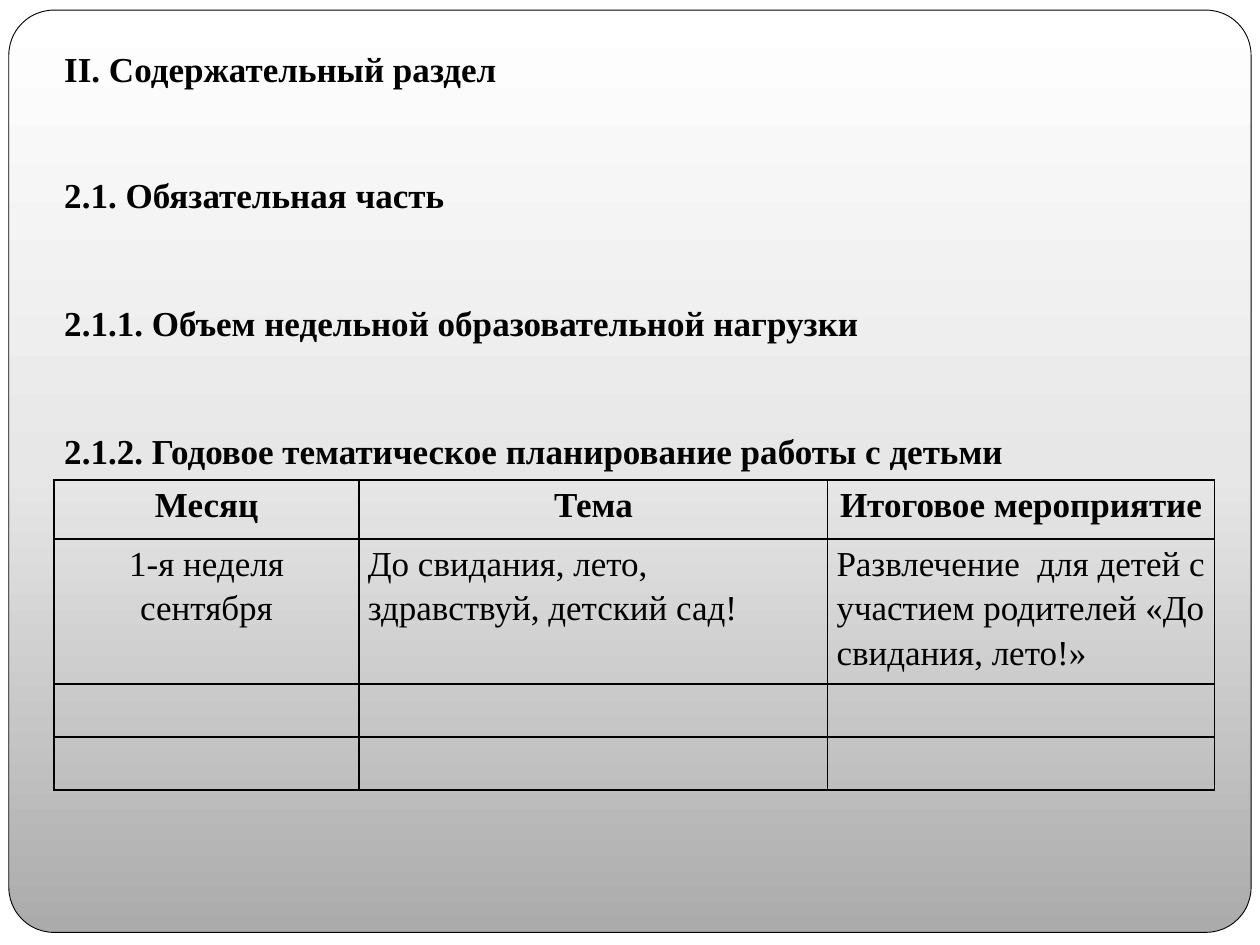
import copy

import pptx
import pptx.dml.color
import pptx.enum.shapes
import pptx.enum.text
import pptx.oxml
import pptx.oxml.ns
import pptx.util
from pptx.util import Inches, Pt

TITLE = "II. Содержательный раздел"
SECTIONS = [
    "2.1. Обязательная часть",
    "2.1.1. Объем недельной образовательной нагрузки",
    "2.1.2. Годовое тематическое планирование работы с детьми",
]
PLAN = [
    ["Месяц", "Тема", "Итоговое мероприятие"],
    ["1-я неделя сентября", "До свидания, лето, здравствуй, детский сад!",
     "Развлечение  для детей с участием родителей «До свидания, лето!»"],
    ["", "", ""],
    ["", "", ""],
]
COL_WIDTHS = [2.42, 3.72, 3.07]
ROW_HEIGHTS = [0.47, 1.15, 0.42, 0.42]

THEME = {
    "font": "Times New Roman",
    "size": Pt(20),
    "ink": pptx.dml.color.RGBColor(0, 0, 0),
    "panel": [(0, "ABABAB"), (0.5, "E7E7E7"), (1, "FFFFFF")],
    "panel_line": Pt(0.5),
    "border": Pt(1),
    "section_gap": Pt(49),
    "cell_spacing": 1.15,
}
ALIGN = pptx.enum.text.PP_ALIGN


def style(p, bold, align=ALIGN.LEFT):
    p.alignment = align
    p.font.name = THEME["font"]
    p.font.size = THEME["size"]
    p.font.bold = bold
    p.font.color.rgb = THEME["ink"]


def add_panel(s):
    """Rounded panel behind everything, shaded from the bottom up."""
    sp = s.shapes.add_shape(pptx.enum.shapes.MSO_SHAPE.ROUNDED_RECTANGLE,
                            Inches(0.07), Inches(0.08), Inches(9.86), Inches(7.32))
    sp.adjustments[0] = 0.049
    sp.shadow.inherit = False
    sp.line.color.rgb = THEME["ink"]
    sp.line.width = THEME["panel_line"]
    sp.fill.gradient()
    sp.fill.gradient_angle = 90
    stops = sp.fill.gradient_stops
    last = sp._element.spPr.find(".//" + pptx.oxml.ns.qn("a:gsLst"))[-1]
    for _ in range(len(THEME["panel"]) - len(stops)):
        last.addnext(copy.deepcopy(last))
    for stop, (position, color) in zip(sp.fill.gradient_stops, THEME["panel"]):
        stop.position = position
        stop.color.rgb = pptx.dml.color.RGBColor.from_string(color)
    s.shapes._spTree.insert(2, sp._element)


def fill_placeholder(sp, lines, top, height):
    sp.left, sp.top = Inches(0.41), Inches(top)
    sp.width, sp.height = Inches(8.82), Inches(height)
    tf = sp.text_frame
    tf.word_wrap = True
    tf.auto_size = pptx.enum.text.MSO_AUTO_SIZE.NONE
    tf.vertical_anchor = pptx.enum.text.MSO_ANCHOR.TOP
    tf.text = "\n".join(lines)
    for p in tf.paragraphs:
        style(p, bold=True)
        p.line_spacing = 1.0
        p.space_before = Pt(0)
        p.space_after = THEME["section_gap"]
        pPr = p._p.get_or_add_pPr()
        pPr.set("marL", "0")
        pPr.set("indent", "0")
        pPr.insert_element_before(
            pptx.oxml.parse_xml(f'<a:buNone {pptx.oxml.ns.nsdecls("a")}/>'),
            "a:tabLst", "a:defRPr", "a:extLst")


def add_borders(cell):
    for side in ("lnL", "lnR", "lnT", "lnB"):
        cell._tc.get_or_add_tcPr().append(pptx.oxml.parse_xml(
            f'<a:{side} {pptx.oxml.ns.nsdecls("a")} w="{THEME["border"]}">'
            f'<a:solidFill><a:srgbClr val="{THEME["ink"]}"/></a:solidFill></a:{side}>'))


def add_plan(s):
    table = s.shapes.add_table(len(PLAN), len(COL_WIDTHS), Inches(0.43), Inches(3.81),
                               Inches(sum(COL_WIDTHS)), Inches(sum(ROW_HEIGHTS))).table
    table.first_row = table.horz_banding = False
    for column, width in zip(table.columns, COL_WIDTHS):
        column.width = Inches(width)
    for r, (row, height) in enumerate(zip(PLAN, ROW_HEIGHTS)):
        table.rows[r].height = Inches(height)
        for c, text in enumerate(row):
            cell = table.cell(r, c)
            add_borders(cell)
            cell.fill.background()
            cell.margin_left = cell.margin_right = Inches(0.07)
            cell.margin_top = cell.margin_bottom = 0
            cell.text = text
            p = cell.text_frame.paragraphs[0]
            style(p, bold=r == 0, align=ALIGN.CENTER if r == 0 or c == 0 else ALIGN.LEFT)
            p.line_spacing = THEME["cell_spacing"]


def main():
    prs = pptx.Presentation()
    prs.slide_width, prs.slide_height = Inches(10), Inches(7.5)
    s = prs.slides.add_slide(prs.slide_layouts[1])
    add_panel(s)
    fill_placeholder(s.shapes.title, [TITLE], 0.33, 0.5)
    fill_placeholder(s.placeholders[1], SECTIONS, 1.33, 2.45)
    add_plan(s)
    prs.save("out.pptx")


if __name__ == "__main__":
    main()
